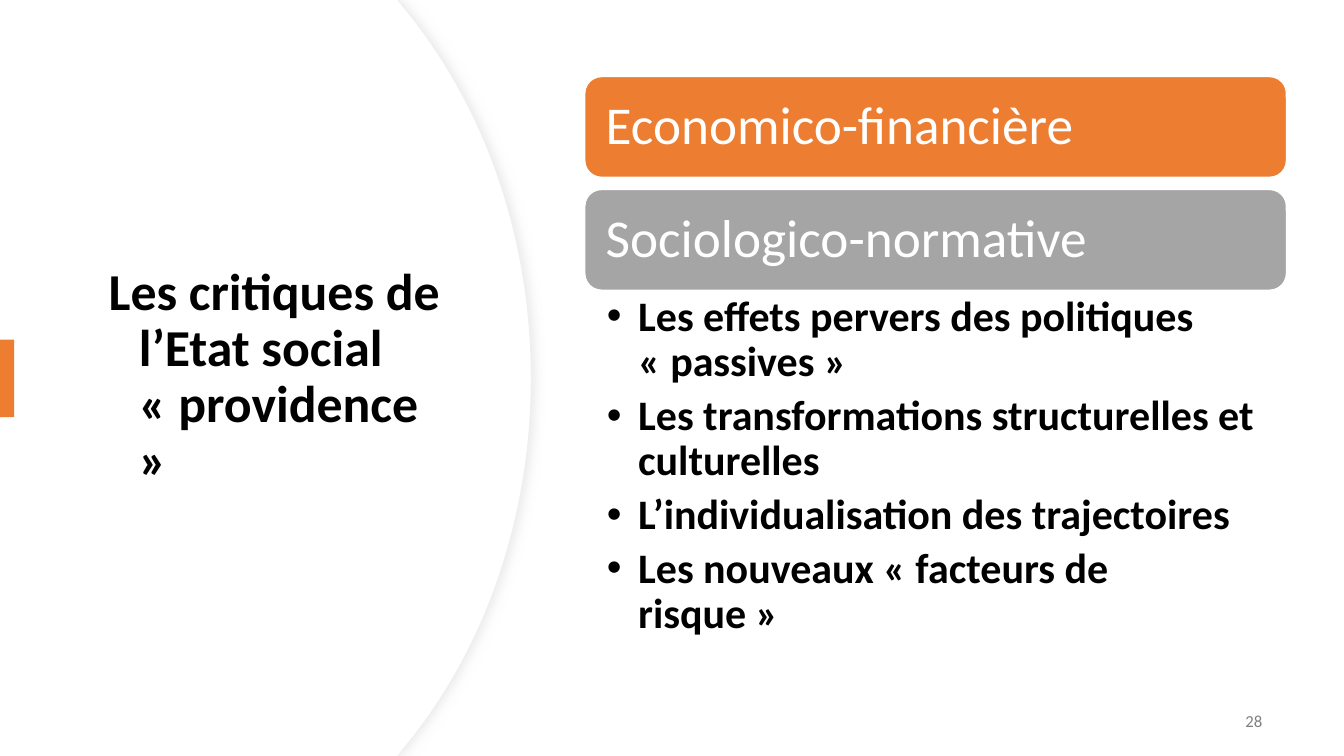
from lxml import etree
from pptx import Presentation
from pptx.dml.color import RGBColor
from pptx.enum.shapes import MSO_SHAPE as SHAPE
from pptx.enum.text import MSO_ANCHOR as ANCHOR, PP_ALIGN as ALIGN
from pptx.oxml import parse_xml
from pptx.oxml.ns import nsdecls, qn
from pptx.util import Inches, Pt

COLORS = {
    "white": "FFFFFF",
    "black": "000000",
    "orange": "ED7D31",
    "gray": "A5A5A5",
    "edge": "EFEFEF",
    "shadow": "D9D9D9",
    "number": "808080",
}
FONT = "Calibri"
HARD_SPACE = chr(160)


def paint(shape, fill, line=None, width=1):
    shape.shadow.inherit = False
    shape.fill.solid()
    shape.fill.fore_color.rgb = RGBColor.from_string(COLORS[fill])
    if line:
        shape.line.color.rgb = RGBColor.from_string(COLORS[line])
        shape.line.width = Pt(width)
    else:
        shape.line.fill.background()


def set_text(shape, texts, size, color, bold=False, anchor=ANCHOR.MIDDLE,
             align=ALIGN.LEFT, spacing=0.9, after=0, indent=None, bullet=None):
    frame = shape.text_frame
    frame.word_wrap = True
    frame.vertical_anchor = anchor
    text = "\n".join(texts)
    frame.text = text.replace("« ", "«" + HARD_SPACE).replace(" »", HARD_SPACE + "»")
    for paragraph in frame.paragraphs:
        paragraph.alignment = align
        paragraph.line_spacing = spacing
        paragraph.space_after = Pt(after)
        properties = paragraph._p.get_or_add_pPr()
        if indent:
            left, first = indent
            properties.set("marL", str(Inches(left)))
            properties.set("indent", str(Inches(first)))
        if bullet:
            etree.SubElement(properties, qn("a:buFont")).set("typeface", "Arial")
            etree.SubElement(properties, qn("a:buChar")).set("char", bullet)
        font = paragraph.runs[0].font
        font.name = FONT
        font.size = Pt(size)
        font.bold = bold
        font.color.rgb = RGBColor.from_string(COLORS[color])


presentation = Presentation()
presentation.slide_width = Inches(13.33)
presentation.slide_height = Inches(7.5)
slide = presentation.slides.add_slide(presentation.slide_layouts[6])
shapes = slide.shapes

for right, line in ((527, "edge"), (526, None)):
    corner = right - 126
    builder = shapes.build_freeform(0, 0, scale=Inches(0.01))
    builder.add_line_segments([(394, 0), (corner, 8), (right, 375), (corner, 742),
                               (394, 750), (0, 750)], close=True)
    panel = builder.convert_to_shape()
    paint(panel, "white", line, 0.75)
    segments = list(panel._element.iter(qn("a:lnTo")))
    bends = (((right - 48, 102), (right, 232)), ((right, 518), (right - 48, 648)))
    for segment, controls in zip(segments[2:4], bends):
        segment.tag = qn("a:cubicBezTo")
        for position, (x, y) in enumerate(controls):
            point = etree.Element(qn("a:pt"), x=str(x), y=str(y))
            segment.insert(position, point)
    if line:
        effects = panel._element.spPr.find(qn("a:effectLst"))
        effects.append(parse_xml(
            f'<a:outerShdw {nsdecls("a")} blurRad="{Pt(7)}" dist="{Pt(3)}" dir="0" '
            f'algn="l" rotWithShape="0"><a:srgbClr val="{COLORS["shadow"]}">'
            '<a:alpha val="50000"/></a:srgbClr></a:outerShdw>'))

title = shapes.add_textbox(Inches(0.68), Inches(1.27), Inches(3.94), Inches(4.95))
title.text_frame.margin_right = Inches(0.2)
set_text(title, ["Les critiques de l’Etat social « providence »"], 37, "black",
         bold=True, indent=(0.6, -0.3))

accent = shapes.add_shape(SHAPE.RECTANGLE, 0, Inches(3.37), Inches(0.14), Inches(0.77))
paint(accent, "orange")

number = shapes.add_textbox(Inches(9.62), Inches(6.95), Inches(3), Inches(0.4))
set_text(number, ["28"], 12, "number", align=ALIGN.RIGHT, spacing=1, after=6)

headings = (("Economico-financière", "orange"), ("Sociologico-normative", "gray"))
for index, (heading, fill) in enumerate(headings):
    banner = shapes.add_shape(SHAPE.ROUNDED_RECTANGLE, Inches(5.8),
                              Inches(0.76 + 1.12 * index), Inches(6.96), Inches(1))
    paint(banner, fill, "white")
    banner.text_frame.margin_left = Inches(0.16)
    set_text(banner, [heading], 38, "white")

critiques = [
    "Les effets pervers des politiques « passives »",
    "Les transformations structurelles et culturelles",
    "L’individualisation des trajectoires",
    "Les nouveaux « facteurs de risque »",
]
details = shapes.add_textbox(Inches(5.8), Inches(2.88), Inches(6.96), Inches(3.87))
details.text_frame.margin_left = Inches(0.22)
details.text_frame.margin_right = Inches(0.3)
set_text(details, critiques, 30, "black", bold=True, anchor=ANCHOR.TOP,
         after=6, indent=(0.31, -0.31), bullet="•")

presentation.save("out.pptx")
